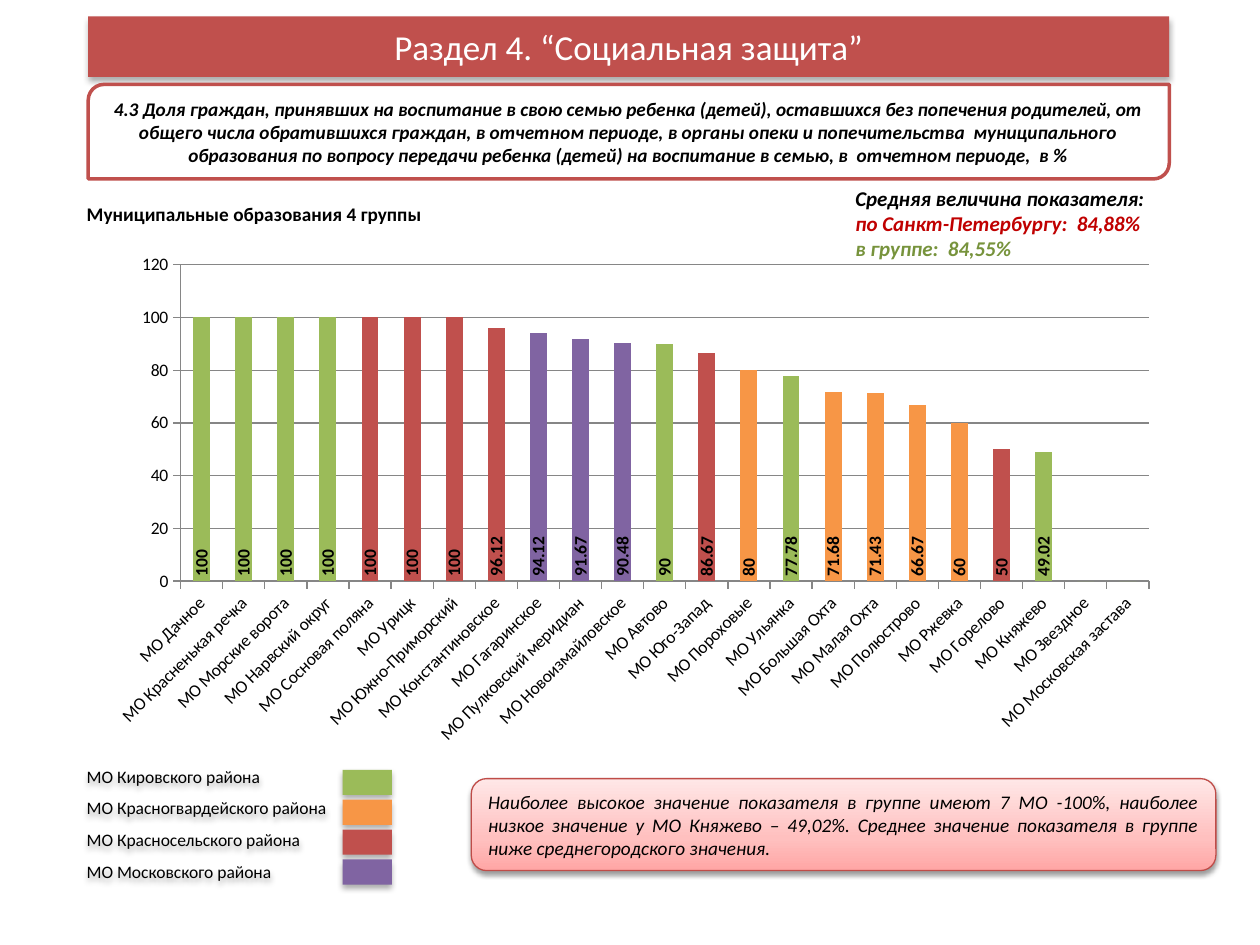
from lxml import etree
from pptx import Presentation
from pptx.chart.data import CategoryChartData
from pptx.dml.color import RGBColor
from pptx.enum.chart import XL_CHART_TYPE, XL_LABEL_POSITION, XL_TICK_MARK
from pptx.enum.shapes import MSO_SHAPE
from pptx.enum.text import MSO_ANCHOR, PP_ALIGN
from pptx.oxml import parse_xml
from pptx.oxml.ns import nsdecls, qn
from pptx.util import Inches, Pt

LEFT, CENTER, JUSTIFY = PP_ALIGN.LEFT, PP_ALIGN.CENTER, PP_ALIGN.JUSTIFY
TOP, MIDDLE = MSO_ANCHOR.TOP, MSO_ANCHOR.MIDDLE
RECT, ROUNDED = MSO_SHAPE.RECTANGLE, MSO_SHAPE.ROUNDED_RECTANGLE
DIAGONAL = MSO_SHAPE.ROUND_2_DIAG_RECTANGLE
COLUMNS, INSIDE_BASE = XL_CHART_TYPE.COLUMN_CLUSTERED, XL_LABEL_POSITION.INSIDE_BASE
CROSS, OUTSIDE = XL_TICK_MARK.CROSS, XL_TICK_MARK.OUTSIDE

# Content
FONT, BLACK, RED = "Calibri", "000000", "C0504D"
TITLE = "Раздел 4. “Социальная защита”"
INDICATOR = (
    "4.3 Доля граждан, принявших на воспитание в свою семью ребенка (детей), "
    "оставшихся без попечения родителей, от общего числа обратившихся граждан, "
    "в отчетном периоде, в органы опеки и попечительства  муниципального "
    "образования по вопросу передачи ребенка (детей) на воспитание в семью, "
    "в  отчетном периоде,  в %")
GROUP = "Муниципальные образования 4 группы"
AVERAGES = [("Средняя величина показателя:", BLACK),
            ("по Санкт-Петербургу:  84,88%", "C00000"),
            ("в группе:  84,55%", "77933C")]
NOTE = (
    "Наиболее высокое значение показателя в группе имеют 7 МО -100%, наиболее "
    "низкое значение у МО Княжево – 49,02%. Среднее значение показателя в группе "
    "ниже среднегородского значения.")
NOTE_STOPS = [(0, "FFA6A5"), (35, "FFC0BF"), (100, "FFE7E7")]
DISTRICTS = {"Кировского": "9BBB59", "Красногвардейского": "F79646",
             "Красносельского": RED, "Московского": "8064A2"}
KIR, GVA, SEL, MOS = DISTRICTS
RESULTS = [
    ("Дачное", 100, KIR), ("Красненькая речка", 100, KIR),
    ("Морские ворота", 100, KIR), ("Нарвский округ", 100, KIR),
    ("Сосновая поляна", 100, SEL), ("Урицк", 100, SEL),
    ("Южно-Приморский", 100, SEL), ("Константиновское", 96.12, SEL),
    ("Гагаринское", 94.12, MOS), ("Пулковский меридиан", 91.67, MOS),
    ("Новоизмайловское", 90.48, MOS), ("Автово", 90, KIR),
    ("Юго-Запад", 86.67, SEL), ("Пороховые", 80, GVA), ("Ульянка", 77.78, KIR),
    ("Большая Охта", 71.68, GVA), ("Малая Охта", 71.43, GVA),
    ("Полюстрово", 66.67, GVA), ("Ржевка", 60, GVA), ("Горелово", 50, SEL),
    ("Княжево", 49.02, KIR), ("Звездное", 0, KIR), ("Московская застава", 0, KIR),
]


def paint(target, colour):
    target.solid()
    target.fore_color.rgb = RGBColor.from_string(colour)


def outline(line, colour, width):
    paint(line.fill, colour)
    line.width = Pt(width)


def add_shadow(shape, alpha=32, blur=3.5, distance=2.2):
    properties = shape.element.spPr
    for old in properties.findall(qn("a:effectLst")):
        properties.remove(old)
    properties.append(parse_xml(
        f'<a:effectLst {nsdecls("a")}><a:outerShdw blurRad="{Pt(blur)}" '
        f'dist="{Pt(distance)}" dir="5400000" rotWithShape="0"><a:srgbClr val="{BLACK}">'
        f'<a:alpha val="{alpha * 1000}"/></a:srgbClr></a:outerShdw></a:effectLst>'))


def write(shape, lines, size, bold=False, italic=False, align=LEFT, anchor=TOP,
          after=0, wrap=True):
    frame = shape.text_frame
    frame.word_wrap = wrap
    frame.vertical_anchor = anchor
    for index, (text, colour) in enumerate(lines):
        para = frame.add_paragraph() if index else frame.paragraphs[0]
        para.alignment = align
        para.space_after = Pt(after)
        span = para.add_run()
        span.text = text
        font = span.font
        font.name, font.size, font.bold, font.italic = FONT, Pt(size), bold, italic
        font.color.rgb = RGBColor.from_string(colour)


def place(*lengths):
    return [Inches(length) for length in lengths]


def add_box(page, kind, *lengths):
    box = page.shapes.add_shape(kind, *place(*lengths))
    box.shadow.inherit = False
    box.line.fill.background()
    return box


def add_header(page):
    banner = page.shapes.title
    banner.left, banner.top, banner.width, banner.height = place(0.7, 0.13, 8.58, 0.48)
    banner.element.spPr.append(parse_xml(
        f'<a:prstGeom {nsdecls("a")} prst="roundRect"><a:avLst/></a:prstGeom>'))
    paint(banner.fill, RED)
    add_shadow(banner)
    write(banner, [(TITLE, "FFFFFF")], 20, align=CENTER, anchor=MIDDLE)

    indicator = add_box(page, DIAGONAL, 0.7, 0.67, 8.58, 0.75)
    paint(indicator.fill, "FFFFFF")
    outline(indicator.line, RED, 2)
    write(indicator, [(INDICATOR, BLACK)], 11, True, True, CENTER, MIDDLE)

    group = page.shapes.add_textbox(*place(0.59, 1.56, 2.97, 0.29))
    write(group, [(GROUP, BLACK)], 11, bold=True)
    averages = page.shapes.add_textbox(*place(6.69, 1.42, 2.6, 0.71))
    write(averages, AVERAGES, 12, True, True, wrap=False)


def add_results(page):
    data = CategoryChartData()
    data.categories = ["МО " + name for name, _, _ in RESULTS]
    data.add_series("Series 1", [value for _, value, _ in RESULTS])
    chart = page.shapes.add_chart(COLUMNS, *place(0.75, 1.94, 8.54, 4.05), data).chart
    chart.has_legend = chart.has_title = False
    chart.font.name, chart.font.size = FONT, Pt(10)
    chart.font.color.rgb = RGBColor.from_string(BLACK)

    # Fixed plot area, as fractions of the chart
    plot_area = chart.plots[0]._element.getparent()
    for old in plot_area.findall(qn("c:layout")):
        plot_area.remove(old)
    layout = parse_xml(f'<c:layout {nsdecls("c")}><c:manualLayout/></c:layout>')
    for tag, value in [("layoutTarget", "inner"), ("xMode", "edge"), ("yMode", "edge"),
                       ("x", 0.08), ("y", 0.04), ("w", 0.9), ("h", 0.62)]:
        etree.SubElement(layout[0], qn("c:" + tag)).set("val", str(value))
    plot_area.insert(0, layout)

    # Axes
    values, names = chart.value_axis, chart.category_axis
    values.minimum_scale, values.maximum_scale, values.major_unit = 0, 120, 20
    values.has_major_gridlines = True
    outline(values.major_gridlines.format.line, "868686", 0.75)
    for axis in (values, names):
        axis.major_tick_mark = OUTSIDE
        outline(axis.format.line, "868686", 0.75)
    names.tick_labels.font.size = Pt(10)
    names._element.find(qn("c:txPr")).find(qn("a:bodyPr")).set("rot", "-2700000")

    # Columns and their labels
    plot = chart.plots[0]
    plot.gap_width, plot.vary_by_categories = 150, False
    series = plot.series[0]
    paint(series.format.fill, DISTRICTS[KIR])
    for index, (_, _, district) in enumerate(RESULTS):
        if district != KIR:
            paint(series.points[index].format.fill, DISTRICTS[district])
    labels = series.data_labels
    labels.show_value, labels.position = True, INSIDE_BASE
    labels.number_format, labels.number_format_is_linked = "General;;", False
    labels.font.size, labels.font.bold = Pt(10), True
    labels._element.find(qn("c:txPr")).find(qn("a:bodyPr")).set("rot", "-5400000")


def add_legend(page):
    names = page.shapes.add_textbox(*place(0.59, 6.03, 2.84, 1.03))
    write(names, [(f"МО {name} района", BLACK) for name in DISTRICTS], 10, after=6)
    add_shadow(names)
    for index, colour in enumerate(DISTRICTS.values()):
        swatch = add_box(page, RECT, 2.72, 6.11 + 0.237 * index, 0.39, 0.2)
        paint(swatch.fill, colour)
        add_shadow(swatch)


def add_note(page):
    note = add_box(page, ROUNDED, 3.74, 6.18, 5.91, 0.73)
    note.fill.gradient()
    note.fill.gradient_angle = 90
    stops = note.element.spPr.find(qn("a:gradFill")).find(qn("a:gsLst"))
    for old in list(stops):
        stops.remove(old)
    for position, colour in NOTE_STOPS:
        stop = etree.SubElement(stops, qn("a:gs"), pos=str(position * 1000))
        etree.SubElement(stop, qn("a:srgbClr"), val=colour)
    outline(note.line, "BF4C48", 0.75)
    add_shadow(note, 38, 3.1, 1.6)
    write(note, [(NOTE, BLACK)], 11, italic=True, align=JUSTIFY, anchor=MIDDLE)


def main():
    deck = Presentation()
    deck.slide_width, deck.slide_height = place(10, 7.5)
    page = deck.slides.add_slide(deck.slide_layouts[5])
    add_header(page)
    add_results(page)
    add_legend(page)
    add_note(page)
    deck.save("out.pptx")


if __name__ == "__main__":
    main()
